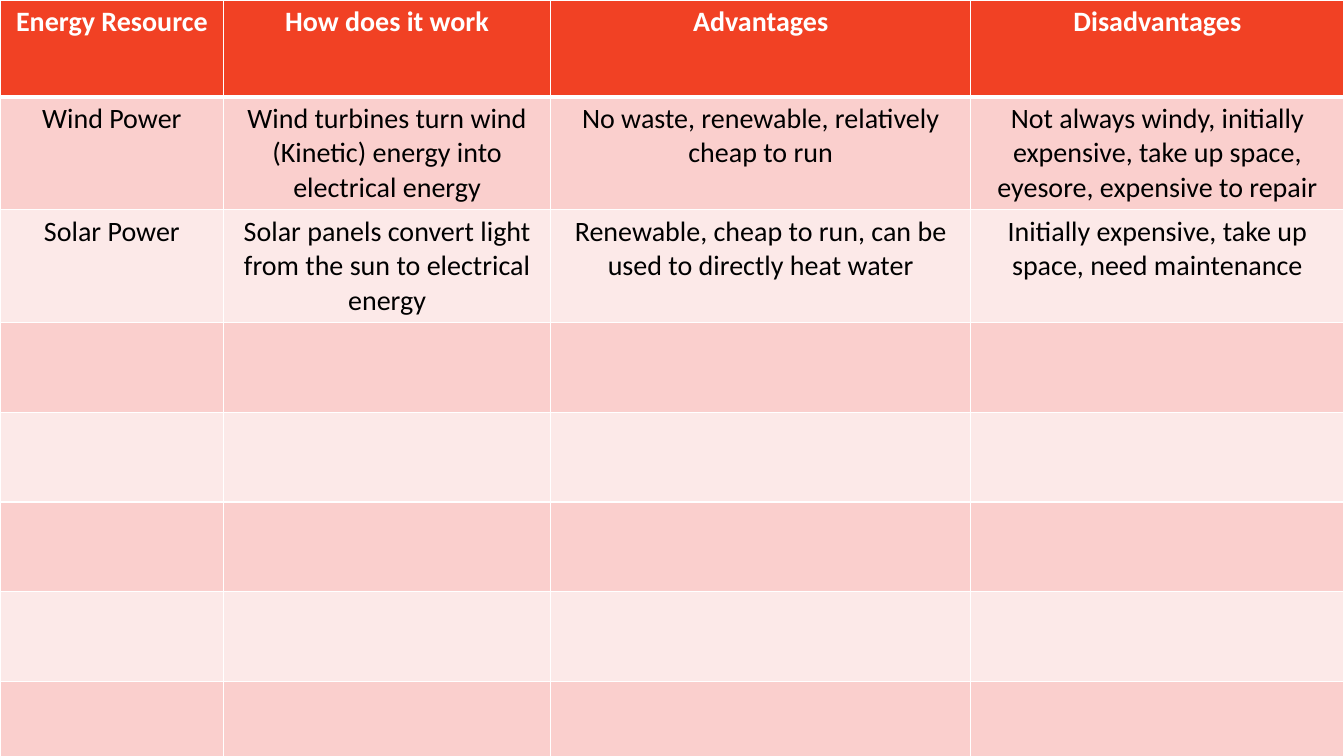
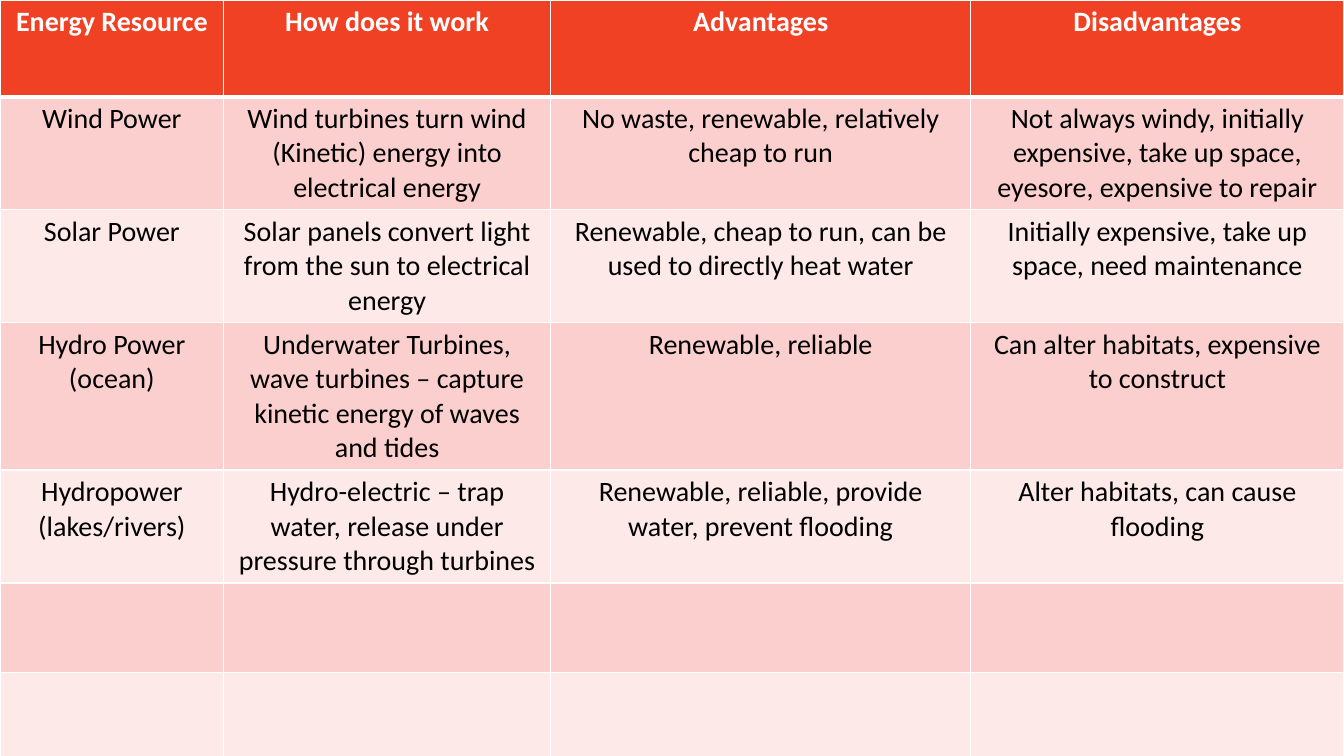
"""Build two slides that fill in a table of energy resources step by step."""
from lxml.etree import SubElement as Sub
from pptx import Presentation
from pptx.dml.color import RGBColor as RGB
from pptx.enum.text import PP_ALIGN as Align
from pptx.oxml.ns import qn
from pptx.util import Inches, Pt

HUES = {"head": "F14124", "odd": "FACFCD", "even": "FCE9E8",
        "white": "FFFFFF", "black": "000000"}
FONT = "Calibri"
SIZE = 20
WIDTHS = [2.22, 3.24, 4.17, 3.7]
TOP, STEP = 0.96, 0.89
ROWS = 9

HEAD = ["Energy Resource", "How does it work", "Advantages", "Disadvantages"]
FACTS = [
    ["Wind Power",
     "Wind turbines turn wind (Kinetic) energy into electrical energy",
     "No waste, renewable, relatively cheap to run",
     "Not always windy, initially expensive, take up space, eyesore, expensive to repair"],
    ["Solar Power",
     "Solar panels convert light from the sun to electrical energy",
     "Renewable, cheap to run, can be used to directly heat water",
     "Initially expensive, take up space, need maintenance"],
    ["Hydro Power\n(ocean)",
     "Underwater Turbines, wave turbines – capture kinetic energy of waves and tides",
     "Renewable, reliable",
     "Can alter habitats, expensive to construct"],
    ["Hydropower\n(lakes/rivers)",
     "Hydro-electric – trap water, release under pressure through turbines",
     "Renewable, reliable, provide water, prevent flooding",
     "Alter habitats, can cause flooding"],
]


def edge(cell, side, width):
    line = Sub(cell._tc.get_or_add_tcPr(), qn("a:ln" + side), w=str(Pt(width)))
    Sub(Sub(line, qn("a:solidFill")), qn("a:srgbClr"), val=HUES["white"])


def write(cell, text, hue, bold):
    frame = cell.text_frame
    for num, part in enumerate(text.split("\n")):
        para = frame.add_paragraph() if num else frame.paragraphs[0]
        para.alignment = Align.CENTER
        run = para.add_run()
        run.text = part
        font = run.font
        font.name, font.size, font.bold = FONT, Pt(SIZE), bold
        font.color.rgb = RGB.from_string(HUES[hue])


deck = Presentation()
deck.slide_width, deck.slide_height = Inches(13.33), Inches(7.5)

for count in (2, 4):
    slide = deck.slides.add_slide(deck.slide_layouts[6])
    frame = slide.shapes.add_table(ROWS, len(WIDTHS), 0, 0, Inches(sum(WIDTHS)),
                                   Inches(TOP + STEP * (ROWS - 1)))
    table = frame.table
    for col, width in zip(table.columns, WIDTHS):
        col.width = Inches(width)
    texts = [HEAD] + FACTS[:count]
    for r, row in enumerate(table.rows):
        row.height = Inches(STEP if r else TOP)
        band = "head" if r == 0 else "odd" if r % 2 else "even"
        for c, cell in enumerate(row.cells):
            for side in "LRTB":
                thick = (r, side) in ((0, "B"), (1, "T"))
                edge(cell, side, 3 if thick else 1)
            cell.fill.solid()
            cell.fill.fore_color.rgb = RGB.from_string(HUES[band])
            if r < len(texts):
                write(cell, texts[r][c], "black" if r else "white", r == 0)

deck.save("out.pptx")
